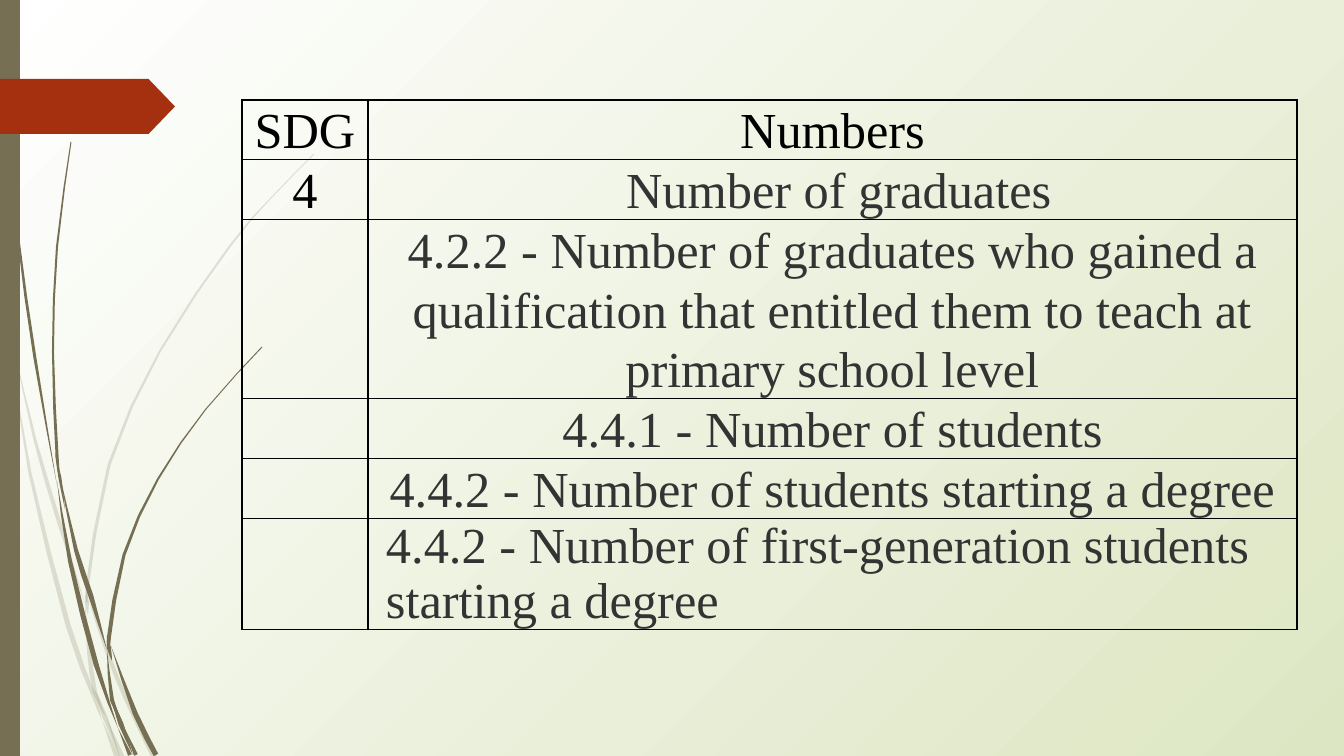
import math

from lxml import etree
from pptx import Presentation
from pptx import util as u
from pptx.dml.color import RGBColor
from pptx.enum import shapes, text
from pptx.oxml import parse_xml
from pptx.oxml.ns import nsdecls, qn

EMU_PER_PX = 12192000 / 1344
COLORS = {
    "stem": "766F54",
    "tag": "A53010",
    "ink": "000000",
    "body": "333333",
    "light": "FFFFFF",
    "green": "DDE6C3",
}
FONT = "Times New Roman"

# Blades of grass, each along its middle: (x, y, thickness)
PALE_BLADES = [
    [(0, 293, 3), (8, 325, 3), (11, 353, 0)],
    [(14, 348, 0), (35, 440, 3), (60, 525, 4), (85, 604, 0)],
    [(89, 601, 0), (108, 654, 4), (126, 699, 4), (154, 757, 5)],
    [(106, 717, 0), (122, 757, 5)],
    [(11, 353, 0), (30, 473, 3), (68, 625, 5), (93, 694, 4), (102, 720, 0)],
    [(85, 604, 0), (89, 651, 4), (95, 692, 4), (106, 717, 0)],
    [(314, 154, 1), (270, 199, 1), (230, 246, 2), (160, 351, 2),
     (109, 465, 3), (87, 589, 3), (89, 601, 0)],
    [(102, 720, 0), (117, 757, 5)],
    [(86, 591, 0), (87, 602, 4), (88, 615, 0)],
    [(94, 688, 0), (105, 717, 5), (120, 757, 0)],
]
DARK_BLADES = [
    [(4, 0, 1), (8, 110, 1), (18, 235, 2), (35, 358, 3), (57, 485, 0)],
    [(60, 476, 0), (76, 550, 4), (91, 596, 5), (107, 650, 0)],
    [(111, 646, 0), (135, 713, 5), (156, 755, 5)],
    [(57, 481, 0), (70, 561, 4), (96, 664, 5), (118, 728, 0)],
    [(71, 142, 1), (57, 247, 2), (53, 352, 2), (57, 454, 3), (60, 476, 0)],
    [(123, 725, 0), (136, 755, 4)],
    [(55, 453, 0), (60, 478, 3), (65, 509, 0)],
    [(262, 347, 1), (206, 409, 1), (158, 479, 2), (124, 555, 3),
     (109, 637, 4), (111, 646, 0)],
    [(118, 728, 0), (130, 755, 4)],
    [(107, 650, 0), (112, 700, 4), (123, 725, 0)],
    [(107, 636, 0), (109, 648, 4), (112, 661, 0)],
    [(111, 697, 0), (121, 724, 5), (133, 755, 0)],
]

COLUMN_WIDTHS = [126, 929]
ROW_HEIGHTS = [59, 60, 179, 60, 59, 111]
ROWS = [
    ("SDG", "Numbers"),
    ("4", " Number of graduates"),
    ("", "4.2.2 - Number of graduates who gained a qualification "
         "that entitled them to teach at primary school level"),
    ("", "4.4.1 - Number of students"),
    ("", "4.4.2 - Number of students starting a degree"),
    ("", "4.4.2 - Number of first-generation students starting a degree"),
]


def px(length):
    return u.Emu(round(length * EMU_PER_PX))


def color(name):
    return RGBColor.from_string(COLORS[name])


def paint(shape, name):
    shape.shadow.inherit = False
    shape.fill.solid()
    shape.fill.fore_color.rgb = color(name)
    shape.line.fill.background()


def set_background(slide):
    """Spread a radial gradient from the top left corner."""
    fill = slide.background.fill
    fill.gradient()
    for stop, name in zip(fill.gradient_stops, ("light", "green")):
        stop.color.rgb = color(name)
    gradient = slide.background._cSld.find(".//" + qn("a:gradFill"))
    gradient.remove(gradient.find(qn("a:lin")))
    gradient.find(qn("a:gsLst")).addnext(parse_xml(
        f'<a:path {nsdecls("a")} path="circle">'
        '<a:fillToRect r="100000" b="100000"/></a:path>'))


def smooth_curve(points, steps=2):
    """Catmull-Rom samples through the points, thickness included."""
    padded = [points[0], *points, points[-1]]
    samples = []
    for a, b, c, d in zip(padded, padded[1:], padded[2:], padded[3:]):
        for step in range(steps):
            t = step / steps
            samples.append(tuple(
                (2 * q + (r - p) * t + (2 * p - 5 * q + 4 * r - s) * t ** 2
                 + (3 * q - p - 3 * r + s) * t ** 3) / 2
                for p, q, r, s in zip(a, b, c, d)))
    return samples + [points[-1]]


def add_blade(slide, points, alpha=100):
    curve = smooth_curve(points)
    left, right = [], []
    for index, (x, y, thickness) in enumerate(curve):
        before = curve[max(index - 1, 0)]
        after = curve[min(index + 1, len(curve) - 1)]
        dx, dy = after[0] - before[0], after[1] - before[1]
        reach = thickness / 2 / math.hypot(dx, dy)
        left.append((px(x - dy * reach), px(y + dx * reach)))
        right.append((px(x + dy * reach), px(y - dx * reach)))
    outline = left + right[::-1]
    builder = slide.shapes.build_freeform(*outline[0])
    builder.add_line_segments(outline[1:], close=True)
    blade = builder.convert_to_shape()
    paint(blade, "stem")
    if alpha < 100:
        tint = blade._element.spPr.find(".//" + qn("a:srgbClr"))
        etree.SubElement(tint, qn("a:alpha"), val=str(alpha * 1000))


def add_preset(slide, kind, left, top, width, height, name):
    shape = slide.shapes.add_shape(kind, px(left), px(top), px(width), px(height))
    paint(shape, name)
    return shape


def set_borders(cell):
    properties = cell._tc.get_or_add_tcPr()
    for index, side in enumerate(("lnL", "lnR", "lnT", "lnB")):
        properties.insert(index, parse_xml(
            f'<a:{side} {nsdecls("a")} w="12700"><a:solidFill>'
            f'<a:srgbClr val="{COLORS["ink"]}"/></a:solidFill></a:{side}>'))


def fill_cell(cell, words, name, centred):
    cell.fill.background()
    set_borders(cell)
    if not words:
        return
    cell.margin_left = cell.margin_right = px(7)
    cell.margin_top = cell.margin_bottom = 0
    cell.text_frame.text = words
    paragraph = cell.text_frame.paragraphs[0]
    if centred:
        paragraph.alignment = text.PP_ALIGN.CENTER
        paragraph.line_spacing = 1.07
    else:
        paragraph._p.get_or_add_pPr().set("marL", str(px(11)))
    font = paragraph.runs[0].font
    font.name, font.size = FONT, u.Pt(36)
    font.color.rgb = color(name)


def add_numbers_table(slide):
    table = slide.shapes.add_table(
        len(ROWS), len(COLUMN_WIDTHS), px(242), px(100),
        px(sum(COLUMN_WIDTHS)), px(sum(ROW_HEIGHTS))).table
    table.first_row = table.horz_banding = False
    for column, width in zip(table.columns, COLUMN_WIDTHS):
        column.width = px(width)
    for row, height in zip(table.rows, ROW_HEIGHTS):
        row.height = px(height)
    for r, words in enumerate(ROWS):
        for c, value in enumerate(words):
            name = "body" if r and c else "ink"
            fill_cell(table.cell(r, c), value, name, centred=r < len(ROWS) - 1)


def main():
    presentation = Presentation()
    presentation.slide_width, presentation.slide_height = px(1344), px(756)
    slide = presentation.slides.add_slide(presentation.slide_layouts[6])
    set_background(slide)
    for points in PALE_BLADES:
        add_blade(slide, points, alpha=20)
    for points in DARK_BLADES:
        add_blade(slide, points)
    add_preset(slide, shapes.MSO_SHAPE.RECTANGLE, 0, 0, 20, 756, "stem")
    tag = add_preset(slide, shapes.MSO_SHAPE.PENTAGON, 0, 79, 175, 55, "tag")
    tag.adjustments[0] = 0.48
    add_numbers_table(slide)
    presentation.save("out.pptx")


if __name__ == "__main__":
    main()
